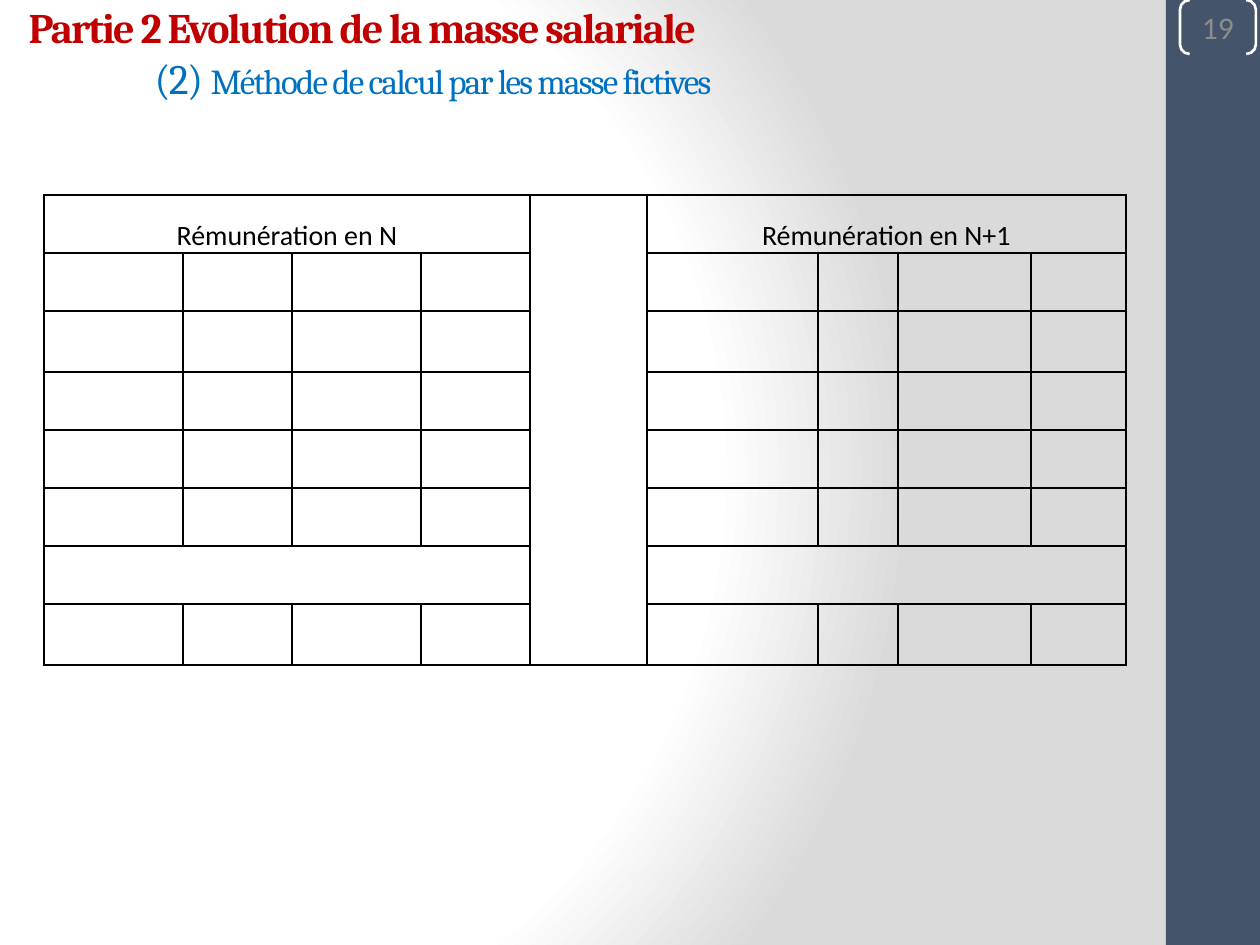
from dataclasses import dataclass

from lxml import etree
from pptx import Presentation
from pptx.dml.color import RGBColor
from pptx.enum.shapes import MSO_SHAPE
from pptx.enum.text import MSO_ANCHOR, MSO_AUTO_SIZE, PP_ALIGN
from pptx.oxml import parse_xml
from pptx.oxml.ns import nsdecls, qn
from pptx.util import Pt

RECT = MSO_SHAPE.RECTANGLE
BRACKET = MSO_SHAPE.DOUBLE_BRACKET
MIDDLE, BOTTOM = MSO_ANCHOR.MIDDLE, MSO_ANCHOR.BOTTOM
LEFT, CENTER = PP_ALIGN.LEFT, PP_ALIGN.CENTER
NO_FIT = MSO_AUTO_SIZE.NONE

SCALE = 914400 / 126
COLS = [139, 109, 129, 109, 117, 171, 80, 133, 95]
ROWS = [58, 58, 61, 58, 58, 58, 58, 61]
GAP_COL, RIGHT_COL = 4, 5
TOTAL_ROW = 6


@dataclass(frozen=True)
class Theme:
    body: str = "Calibri"
    head: str = "Cambria"
    white: str = "FFFFFF"
    fade: str = "DADADA"
    bar: str = "44546A"
    red: str = "C00000"
    blue: str = "0070C0"
    gray: str = "8C8C8C"
    black: str = "000000"
    title: int = 24
    sub: int = 20
    number: int = 18
    cell: int = 16


THEME = Theme()


def px(n):
    return round(n * SCALE)


def rgb(code):
    return RGBColor.from_string(code)


def add_run(para, text, font, size, color, bold=False, track=0):
    run = para.add_run()
    run.text = text
    run.font.name = font
    run.font.size = Pt(size)
    run.font.bold = bold
    run.font.color.rgb = rgb(color)
    if track:
        run.font._element.set("spc", str(track))


def set_back(slide):
    stops = [(0, THEME.white), (75000, THEME.white), (100000, THEME.fade)]
    marks = "".join(
        f'<a:gs pos="{pos}"><a:srgbClr val="{color}"/></a:gs>' for pos, color in stops
    )
    back = parse_xml(
        f'<p:bg {nsdecls("p", "a")}><p:bgPr><a:gradFill rotWithShape="1">'
        f'<a:gsLst>{marks}</a:gsLst><a:path path="circle">'
        '<a:fillToRect l="20000" t="50000" r="100000" b="50000"/></a:path>'
        "</a:gradFill><a:effectLst/></p:bgPr></p:bg>"
    )
    slide.element.cSld.insert(0, back)


def add_box(slide, kind, x, y, w, h):
    box = slide.shapes.add_shape(kind, px(x), px(y), px(w), px(h))
    box.shadow.inherit = False
    return box


def add_bar(slide):
    bar = add_box(slide, RECT, 1166, 0, 94, 945)
    bar.fill.solid()
    bar.fill.fore_color.rgb = rgb(THEME.bar)
    bar.line.fill.background()


def add_number(slide, text):
    box = add_box(slide, BRACKET, 1180, 0, 76, 54)
    box.adjustments[0] = 0.18
    box.fill.background()
    box.line.color.rgb = rgb(THEME.white)
    box.line.width = Pt(1.5)
    frame = box.text_frame
    frame.margin_left = frame.margin_right = 0
    frame.margin_top = frame.margin_bottom = 0
    frame.vertical_anchor = MIDDLE
    para = frame.paragraphs[0]
    para.alignment = CENTER
    add_run(para, text, THEME.body, THEME.number, THEME.gray)


def add_title(slide):
    title = slide.shapes.title
    title.left, title.top = px(0), px(13)
    title.width, title.height = px(1050), px(78)
    frame = title.text_frame
    frame.word_wrap = True
    frame.auto_size = NO_FIT
    frame.vertical_anchor = MIDDLE
    lines = [
        [("Partie 2 Evolution de la masse salariale", THEME.title, THEME.red, True)],
        [
            ("\t", THEME.title, THEME.red, True),
            ("(2) ", THEME.title, THEME.blue, False),
            ("Méthode de calcul par les masse fictives", THEME.sub, THEME.blue, False),
        ],
    ]
    for i, line in enumerate(lines):
        para = frame.add_paragraph() if i else frame.paragraphs[0]
        para.alignment = LEFT
        para.line_spacing = 1.0
        props = para._p.get_or_add_pPr()
        props.set("marL", str(px(16)))
        props.set("indent", "0")
        props.set("defTabSz", str(px(126)))
        for text, size, color, bold in line:
            add_run(para, text, THEME.head, size, color, bold, -100)


def set_edges(cell):
    props = cell._tc.get_or_add_tcPr()
    for side in ("lnL", "lnR", "lnT", "lnB"):
        edge = etree.SubElement(props, qn(f"a:{side}"), w=str(Pt(1)))
        fill = etree.SubElement(edge, qn("a:solidFill"))
        etree.SubElement(fill, qn("a:srgbClr"), val=THEME.black)


def set_head(cell, text):
    cell.vertical_anchor = BOTTOM
    cell.margin_left = cell.margin_right = cell.margin_top = px(1)
    cell.margin_bottom = 0
    para = cell.text_frame.paragraphs[0]
    para.alignment = CENTER
    add_run(para, text, THEME.body, THEME.cell, THEME.black)


def add_grid(slide):
    frame = slide.shapes.add_table(
        len(ROWS), len(COLS), px(44), px(195), px(sum(COLS)), px(sum(ROWS))
    )
    table = frame.table
    table.first_row = table.horz_banding = False
    for col, width in zip(table.columns, COLS):
        col.width = px(width)
    for row, height in zip(table.rows, ROWS):
        row.height = px(height)
    for row in (0, TOTAL_ROW):
        for col in (0, RIGHT_COL):
            table.cell(row, col).merge(table.cell(row, col + 3))
    table.cell(0, GAP_COL).merge(table.cell(len(ROWS) - 1, GAP_COL))
    for cell in table.iter_cells():
        if not cell.is_spanned:
            set_edges(cell)
        cell.fill.background()
    set_head(table.cell(0, 0), "Rémunération en N")
    set_head(table.cell(0, RIGHT_COL), "Rémunération en N+1")


def main():
    deck = Presentation()
    deck.slide_width, deck.slide_height = px(1260), px(945)
    slide = deck.slides.add_slide(deck.slide_layouts[5])
    set_back(slide)
    add_bar(slide)
    add_number(slide, "19")
    add_grid(slide)
    add_title(slide)
    deck.save("out.pptx")


if __name__ == "__main__":
    main()
